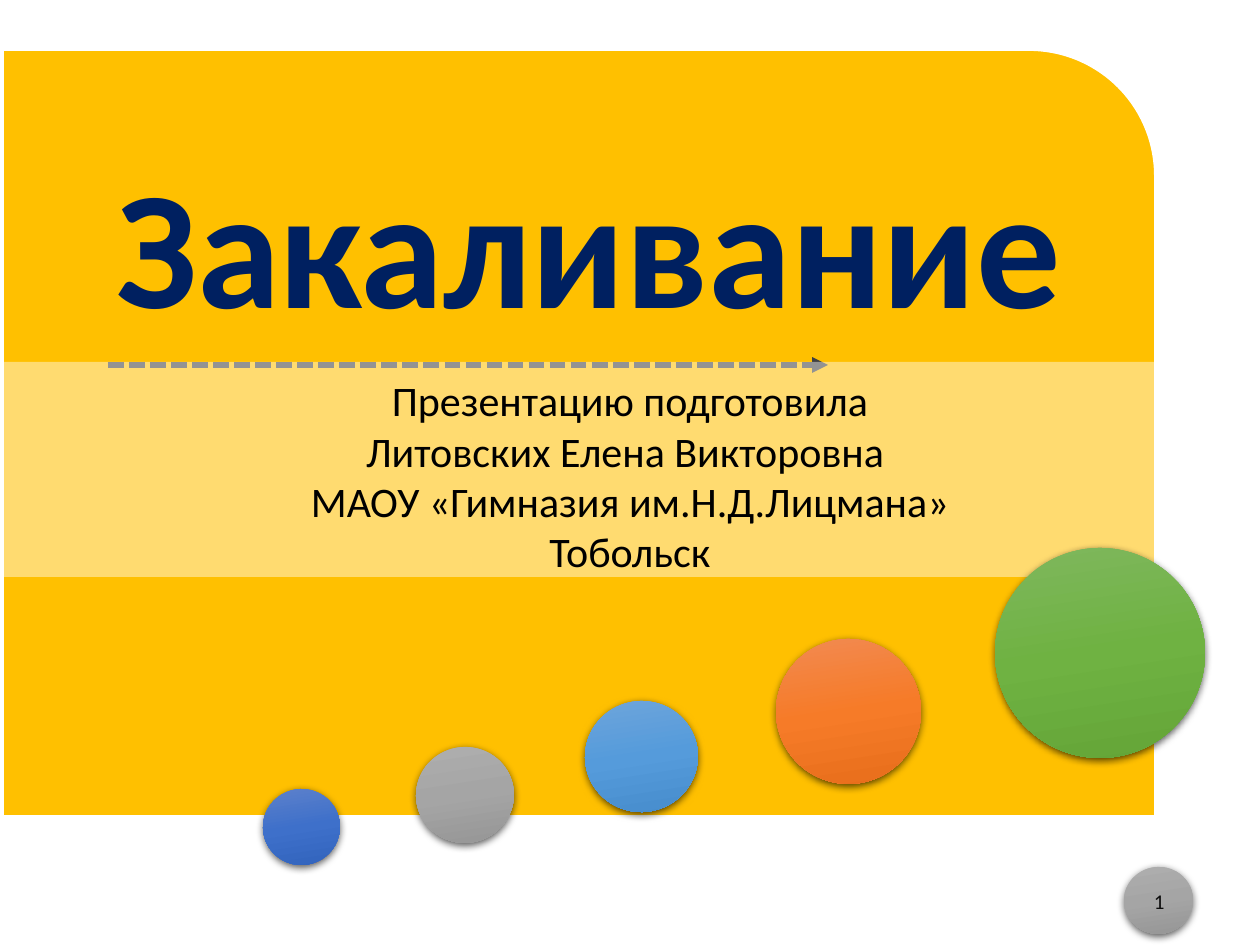
"""Build the title slide of a presentation about hardening the body."""
from copy import deepcopy

from lxml import etree
from pptx import Presentation
from pptx.dml.color import RGBColor
from pptx.enum.dml import MSO_LINE
from pptx.enum.shapes import MSO_CONNECTOR, MSO_SHAPE
from pptx.enum.text import MSO_ANCHOR, PP_ALIGN
from pptx.oxml.ns import qn
from pptx.util import Emu, Pt

CIRCLE, BAND, PANEL = MSO_SHAPE.FLOWCHART_CONNECTOR, MSO_SHAPE.RECTANGLE, MSO_SHAPE.ROUND_1_RECTANGLE
STRAIGHT, DASH = MSO_CONNECTOR.STRAIGHT, MSO_LINE.SQUARE_DOT
CENTER, RIGHT = PP_ALIGN.CENTER, PP_ALIGN.RIGHT
TOP, MIDDLE = MSO_ANCHOR.TOP, MSO_ANCHOR.MIDDLE

COLORS = {
    "white": "FFFFFF", "amber": "FFC000", "navy": "002060", "black": "000000",
    "arrow": "404040", "number": "0D0D0D",
}
GRADIENTS = {
    "gray": ("AFAFAF", "A5A5A5", "939393"),
    "green": ("81B861", "6FB242", "62A336"),
    "orange": ("F18C57", "F67B28", "E56C19"),
    "sky": ("71A6DB", "559BDB", "448ACA"),
    "blue": ("6183CB", "3E70CA", "3062BB"),
}
SCALE = 914400 / 126


def px(*lengths):
    return [Emu(round(length * SCALE)) for length in lengths]


def write(holder, text, size, color, align=CENTER, anchor=TOP, bold=False):
    frame = holder.text_frame
    frame.word_wrap = True
    frame.vertical_anchor = anchor
    frame.text = text
    for paragraph in frame.paragraphs:
        paragraph.alignment = align
        paragraph.font.name = "Calibri"
        paragraph.font.size = Pt(size)
        paragraph.font.bold = bold
        paragraph.font.color.rgb = RGBColor.from_string(COLORS[color])


prs = Presentation()
prs.slide_width, prs.slide_height = px(1260, 945)
slide = prs.slides.add_slide(prs.slide_layouts[6])
shapes = slide.shapes

page_circle = shapes.add_shape(CIRCLE, *px(1124, 867, 69, 67))

panel = shapes.add_shape(PANEL, *px(0, 47, 1158, 772))
panel.shadow.inherit = False
panel.fill.solid()
panel.fill.fore_color.rgb = RGBColor.from_string(COLORS["amber"])
panel.line.color.rgb = RGBColor.from_string(COLORS["white"])
panel.line.width = Pt(4.5)

title = shapes.add_textbox(*px(47, 134, 1084, 217))
write(title, "Закаливание", 96, "navy", bold=True)

arrow = shapes.add_connector(STRAIGHT, *px(108, 365, 828, 365))
arrow.line.color.rgb = RGBColor.from_string(COLORS["arrow"])
arrow.line.width = Pt(3)
arrow.line.dash_style = DASH
etree.SubElement(arrow.line._get_or_add_ln(), qn("a:tailEnd"), type="triangle")
etree.SubElement(arrow._element.spPr, qn("a:effectLst"))

page_number = shapes.add_textbox(*px(893, 876, 284, 50))
write(page_number, "1", 12, "number", align=RIGHT, anchor=MIDDLE)

band = shapes.add_shape(BAND, *px(0, 362, 1260, 215))
band.shadow.inherit = False
band.line.fill.background()
band.fill.solid()
band.fill.fore_color.rgb = RGBColor.from_string(COLORS["white"])
band_color = band._element.spPr.find(".//" + qn("a:srgbClr"))
etree.SubElement(band_color, qn("a:alpha"), val="44000")
authors = ("Презентацию подготовила", "Литовских Елена Викторовна ",
           "МАОУ «Гимназия им.Н.Д.Лицмана»", "Тобольск")
write(band, "\n".join(authors), 24, "black", anchor=MIDDLE)
band.text_frame.margin_top, band.text_frame.margin_bottom = px(12, 0)

circles = [(page_circle, "gray")]
trail = shapes.add_group_shape()
for color, bounds in (
    ("green", (995, 548, 210, 210)),
    ("orange", (776, 639, 145, 145)),
    ("sky", (585, 701, 113, 111)),
    ("gray", (416, 747, 98, 96)),
    ("blue", (263, 789, 77, 76)),
):
    circles.append((trail.shapes.add_shape(CIRCLE, *px(*bounds)), color))

for circle, color in circles:
    circle.rotation = 351.1
    circle.line.fill.background()
    circle.fill.gradient()
    circle.fill.gradient_angle = 270
    stop_list = circle._element.spPr.find(".//" + qn("a:gsLst"))
    stop_list.insert(1, deepcopy(stop_list[0]))
    for stop, position, shade in zip(circle.fill.gradient_stops, (0, 0.5, 1), GRADIENTS[color]):
        stop.position = position
        stop.color.rgb = RGBColor.from_string(shade)
    circle.shadow.inherit = False
    effects = circle._element.spPr.find(qn("a:effectLst"))
    shadow = etree.SubElement(effects, qn("a:outerShdw"), blurRad="57150", dist="19050",
                              dir="5400000", algn="ctr", rotWithShape="0")
    shadow_color = etree.SubElement(shadow, qn("a:srgbClr"), val=COLORS["black"])
    etree.SubElement(shadow_color, qn("a:alpha"), val="63000")

prs.save("out.pptx")
